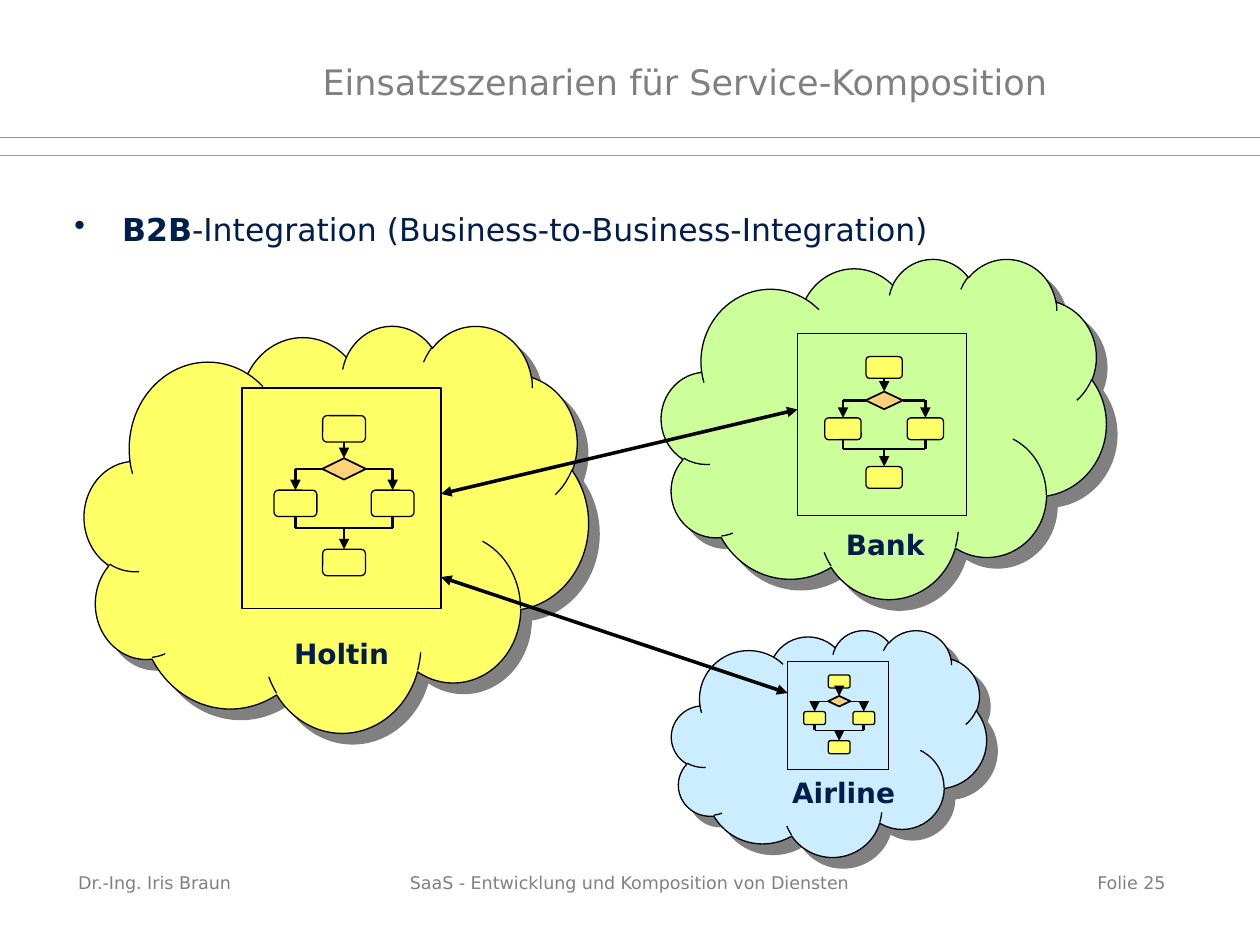
from dataclasses import dataclass

from lxml import etree
from pptx import Presentation
from pptx import util as u
from pptx.dml.color import RGBColor
from pptx.enum import shapes, text
from pptx.oxml.ns import qn


@dataclass(frozen=True)
class Theme:
    font: str = "DejaVu Sans"
    navy: str = "001D4B"
    gray: str = "808080"
    rule: str = "969696"
    black: str = "000000"
    yellow: str = "FFFF66"
    orange: str = "FFD279"
    green: str = "CCFF99"
    blue: str = "CCECFF"
    title: int = 20
    body: int = 18
    label: int = 16
    footer: int = 10


THEME = Theme()
SHAPE = shapes.MSO_SHAPE
ALIGN = text.PP_ALIGN


def set_attributes(target, values):
    for name, value in values.items():
        setattr(target, name, value)


def add_element(parent, tag, **attributes):
    return etree.SubElement(parent, qn(tag), attributes)


class SlideBuilder:
    def __init__(self, slide, theme):
        self.slide = slide
        self.theme = theme

    def shape(self, kind, box, fill=None, width=0.75, container=None):
        owner = container or self.slide
        shape = owner.shapes.add_shape(kind, *map(u.Inches, box))
        shape.shadow.inherit = False
        if fill:
            shape.fill.solid()
            shape.fill.fore_color.rgb = RGBColor.from_string(fill)
        else:
            shape.fill.background()
        shape.line.color.rgb = RGBColor.from_string(self.theme.black)
        shape.line.width = u.Pt(width)
        return shape

    def line(self, start, end, width, color=None, head=False, tail=False, container=None):
        owner = container or self.slide
        connector = owner.shapes.add_connector(
            shapes.MSO_CONNECTOR.STRAIGHT, *map(u.Inches, (*start, *end)))
        connector.line.color.rgb = RGBColor.from_string(color or self.theme.black)
        connector.line.width = u.Pt(width)
        properties = connector.line._get_or_add_ln()
        for tag, wanted in (("a:headEnd", head), ("a:tailEnd", tail)):
            if wanted:
                add_element(properties, tag, type="triangle")
        add_element(connector._element.spPr, "a:effectLst")

    def text(self, box, runs, size, color, align=ALIGN.LEFT, insets=(0.1, 0.05, 0.1, 0.05),
             anchor=text.MSO_ANCHOR.TOP, bullet_indent=None):
        frame = self.slide.shapes.add_textbox(*map(u.Inches, box)).text_frame
        left, top, right, bottom = map(u.Inches, insets)
        set_attributes(frame, {
            "word_wrap": True, "vertical_anchor": anchor,
            "margin_left": left, "margin_top": top,
            "margin_right": right, "margin_bottom": bottom})
        paragraph = frame.paragraphs[0]
        paragraph.alignment = align
        if bullet_indent:
            indent = u.Inches(bullet_indent)
            properties = paragraph._p.get_or_add_pPr()
            properties.set("marL", str(indent))
            properties.set("indent", str(-indent))
            add_element(properties, "a:buChar", char="•")
        for words, bold in runs:
            run = paragraph.add_run()
            run.text = words
            set_attributes(run.font, {
                "name": self.theme.font, "size": u.Pt(size), "bold": bold})
            run.font.color.rgb = RGBColor.from_string(color)

    def cloud(self, box, fill):
        cloud = self.shape(SHAPE.CLOUD, box, fill)
        effects = cloud._element.spPr.find(qn("a:effectLst"))
        shadow = add_element(effects, "a:outerShdw", blurRad="0", dist=str(u.Pt(8.5)),
                             dir="2700000", algn="ctr", rotWithShape="0")
        add_element(shadow, "a:srgbClr", val=self.theme.gray)

    def workflow(self, frame, arrow_width, link_width):
        """Draw a flow chart whose parts are fractions of its frame."""
        left, top, width, height = frame
        group = self.slide.shapes.add_group_shape()
        middle, west, east = (0.513, 0.269, 0.757)
        box_width, box_height, diamond_width, diamond_height = 0.215, 0.12, 0.22, 0.097
        first, decision, branch, join, last = 0.125, 0.318, 0.463, 0.634, 0.731
        split = decision + diamond_height / 2

        def node(kind, x, y, node_width, node_height, fill, outline):
            self.shape(kind, (left + (x - node_width / 2) * width, top + y * height,
                              node_width * width, node_height * height),
                       fill, outline, group)

        def link(x1, y1, x2, y2, line_width, arrow=False):
            self.line((left + x1 * width, top + y1 * height),
                      (left + x2 * width, top + y2 * height),
                      line_width, tail=arrow, container=group)

        # Steps and decision
        node(SHAPE.DIAMOND, middle, decision, diamond_width, diamond_height,
             self.theme.orange, 1)
        for x, y in ((middle, first), (west, branch), (east, branch), (middle, last)):
            node(SHAPE.ROUNDED_RECTANGLE, x, y, box_width, box_height,
                 self.theme.yellow, 0.75)

        # Flow through both branches
        link(middle, first + box_height, middle, decision, arrow_width, True)
        for x, side in ((west, -1), (east, 1)):
            link(middle + side * diamond_width / 2, split, x, split, link_width)
            link(x, split, x, branch, arrow_width, True)
            link(x, branch + box_height, x, join, 1.5)
            link(x, join, middle, join, link_width)
        link(middle, join, middle, last, arrow_width, True)
        self.shape(SHAPE.RECTANGLE, frame, container=group)


def main():
    presentation = Presentation()
    presentation.slide_width, presentation.slide_height = u.Inches(10), u.Inches(7.5)
    slide = presentation.slides.add_slide(presentation.slide_layouts[6])
    builder = SlideBuilder(slide, THEME)

    # Header
    for y in (1.23, 1.09):
        builder.line((0, y), (10, y), 0.5, THEME.rule)
    builder.text((2.56, 0.44, 6.71, 0.42),
                 [("Einsatzszenarien für Service-Komposition", False)],
                 THEME.title, THEME.gray, insets=(0, 0.05, 0.1, 0.05),
                 anchor=text.MSO_ANCHOR.MIDDLE)

    # Topic
    builder.text((0.59, 1.62, 8.66, 5.04),
                 [("B2B", True), ("-Integration (Business-to-Business-Integration)", False)],
                 THEME.body, THEME.navy, insets=(0, 0.05, 0.1, 0.05), bullet_indent=0.38)

    # Partners: name, label box, cloud, colour, workflow frame, line widths
    partners = [
        ("Holtin", (2.17, 5, 1.08, 0.37), (0.67, 2.58, 4, 3.23), THEME.yellow,
         (1.92, 3.08, 1.58, 1.75), 1.5, 1.5),
        ("Bank", (5.9, 4.14, 2.25, 0.37), (5.25, 2.05, 3.53, 2.7), THEME.green,
         (6.33, 2.65, 1.34, 1.44), 1.5, 1.5),
        ("Airline", (6.02, 6.11, 1.35, 0.37), (5.33, 5, 2.5, 1.8), THEME.blue,
         (6.25, 5.25, 0.8, 0.86), 0.5, 0.75),
    ]
    for name, label_box, cloud_box, color, frame, arrow_width, link_width in partners:
        builder.cloud(cloud_box, color)
        builder.workflow(frame, arrow_width, link_width)
        builder.text(label_box, [(name, True)], THEME.label, THEME.navy, ALIGN.CENTER)

    # Exchange between partners
    for start, end in (((3.5, 4.58), (6.25, 5.5)), ((3.5, 3.92), (6.33, 3.25))):
        builder.line(start, end, 2, head=True, tail=True)

    # Footer
    footers = [
        ("Dr.-Ing. Iris Braun", (0.62, 6.92, 2.25, 0.29), ALIGN.LEFT),
        ("Folie 25", (7.17, 6.92, 2.08, 0.25), ALIGN.RIGHT),
        ("SaaS - Entwicklung und Komposition von Diensten",
         (3.08, 6.92, 3.83, 0.33), ALIGN.CENTER),
    ]
    for words, box, align in footers:
        builder.text(box, [(words, False)], THEME.footer, THEME.gray, align,
                     insets=(0, 0, 0, 0))

    presentation.save("out.pptx")


if __name__ == "__main__":
    main()
